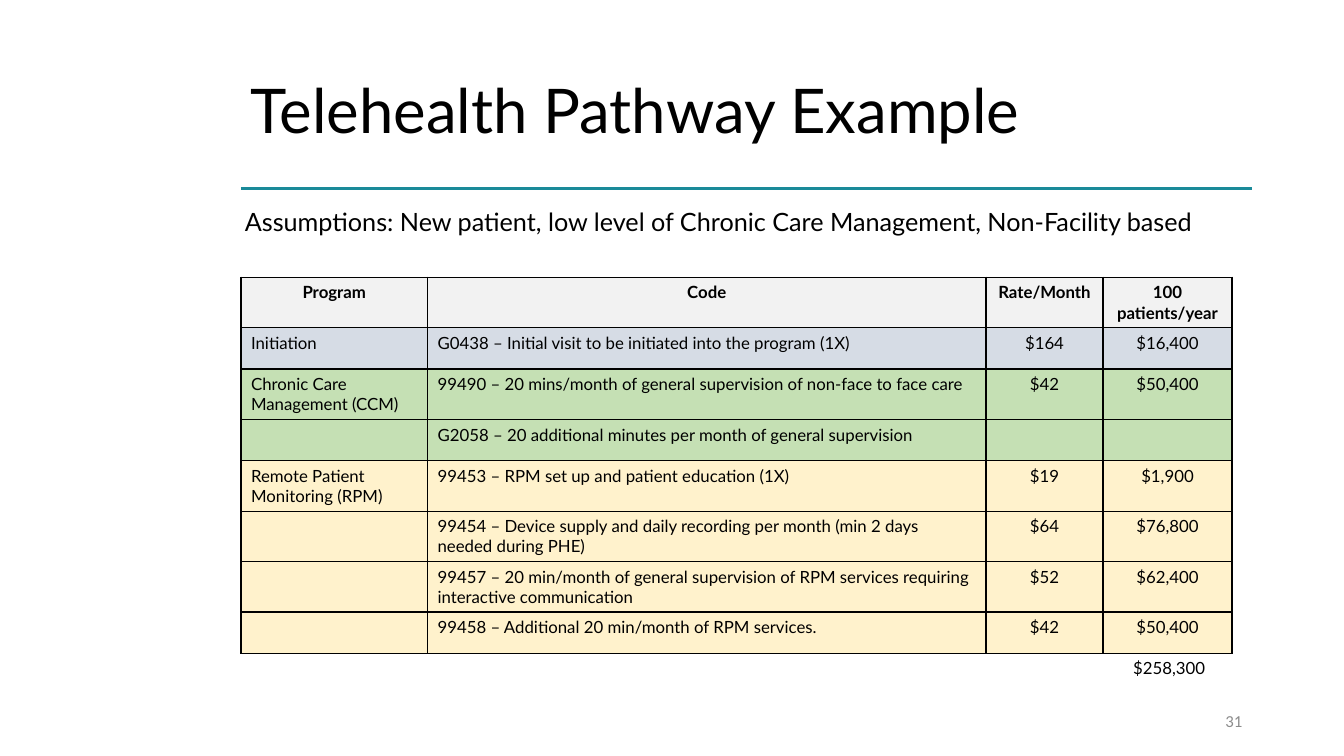
"""Build the telehealth pathway slide."""
from lxml import etree
from pptx import Presentation
from pptx.dml.color import RGBColor
from pptx.enum.shapes import MSO_CONNECTOR
from pptx.enum.text import MSO_ANCHOR, PP_ALIGN
from pptx.oxml.ns import qn
from pptx.util import Inches, Pt

LEFT, MID, RIGHT = PP_ALIGN.LEFT, PP_ALIGN.CENTER, PP_ALIGN.RIGHT
TOP, CENTER = MSO_ANCHOR.TOP, MSO_ANCHOR.MIDDLE
STRAIGHT = MSO_CONNECTOR.STRAIGHT

GRAY, BLUE, GREEN, CREAM = "F2F2F2", "D6DCE5", "C5E0B4", "FFF2CC"
COLS = [1.85, 5.54, 1.16, 1.28]
ROWS = [
    (GRAY, "Program", "Code", "Rate/Month", "100 patients/year"),
    (BLUE, "Initiation",
     "G0438 – Initial visit to be initiated into the program (1X)",
     "$164", "$16,400"),
    (GREEN, "Chronic Care Management (CCM)",
     "99490 – 20 mins/month of general supervision of non-face to face care",
     "$42", "$50,400"),
    (GREEN, "",
     "G2058 – 20 additional minutes per month of general supervision", "", ""),
    (CREAM, "Remote Patient Monitoring (RPM)",
     "99453 – RPM set up and patient education (1X)", "$19", "$1,900"),
    (CREAM, "",
     "99454 – Device supply and daily recording per month "
     "(min 2 days needed during PHE)", "$64", "$76,800"),
    (CREAM, "",
     "99457 – 20 min/month of general supervision of RPM services "
     "requiring interactive communication", "$52", "$62,400"),
    (CREAM, "", "99458 – Additional 20 min/month of RPM services.",
     "$42", "$50,400"),
]


def color(code):
    return RGBColor.from_string(code)


def write(frame, text, size=12, font="Lato", ink="000000", bold=False,
          align=LEFT, space=1.0, indent=0):
    para = frame.paragraphs[0]
    para.alignment = align
    para.line_spacing = space
    if indent:
        para._p.get_or_add_pPr().set("marL", str(Inches(indent)))
    if text:
        run = para.add_run()
        run.text = text
        run.font.size = Pt(size)
        run.font.name = font
        run.font.bold = bold
        run.font.color.rgb = color(ink)


class Deck:
    def __init__(self):
        self.prs = Presentation()
        self.prs.slide_width = Inches(13.33)
        self.prs.slide_height = Inches(7.5)
        self.slide = self.prs.slides.add_slide(self.prs.slide_layouts[6])
        self.edge = "000000"
        self.rule = "1A8A99"

    def text(self, box, words, anchor=TOP, **style):
        shape = self.slide.shapes.add_textbox(*map(Inches, box))
        frame = shape.text_frame
        frame.word_wrap = True
        frame.vertical_anchor = anchor
        write(frame, words, **style)

    def line(self, left, right, top):
        line = self.slide.shapes.add_connector(
            STRAIGHT, Inches(left), Inches(top), Inches(right), Inches(top))
        line.line.color.rgb = color(self.rule)
        line.line.width = Pt(1.75)
        etree.SubElement(line._element.spPr, qn("a:effectLst"))

    def border(self, cell):
        props = cell._tc.get_or_add_tcPr()
        for spot, side in enumerate(("lnL", "lnR", "lnT", "lnB")):
            edge = etree.Element(qn("a:" + side), w=str(Pt(1)))
            fill = etree.SubElement(edge, qn("a:solidFill"))
            etree.SubElement(fill, qn("a:srgbClr"), val=self.edge)
            props.insert(spot, edge)

    def table(self, box, rows, cols, head, body):
        grid = self.slide.shapes.add_table(
            len(rows), len(cols), *map(Inches, box)).table
        grid.first_row = grid.horz_banding = False
        for col, width in zip(grid.columns, cols):
            col.width = Inches(width)
        for r, (tint, *words) in enumerate(rows):
            grid.rows[r].height = Inches(body if r else head)
            for c, word in enumerate(words):
                cell = grid.cell(r, c)
                cell.fill.solid()
                cell.fill.fore_color.rgb = color(tint)
                self.border(cell)
                write(cell.text_frame, word, bold=r == 0,
                      align=MID if r == 0 or c > 1 else LEFT)


def main():
    deck = Deck()
    deck.line(2.39, 12.42, 1.87)
    deck.text((1.83, 2.03, 10.24, 4.14),
              "Assumptions: New patient, low level of Chronic Care Management, "
              "Non-Facility based", size=18, space=0.9, indent=0.5)
    deck.text((9.42, 6.95, 3, 0.4), "31", anchor=CENTER, font="Calibri",
              ink="8C8C8C", align=RIGHT)
    deck.text((2.39, 0.4, 10.03, 1.45), "Telehealth Pathway Example",
              anchor=CENTER, size=44, space=0.9)
    deck.table((2.39, 2.75, 9.84, 3.18), ROWS, COLS, 0.31, 0.41)
    deck.text((11.14, 6.48, 1.28, 0.3), "$258,300")
    deck.prs.save("out.pptx")


if __name__ == "__main__":
    main()
